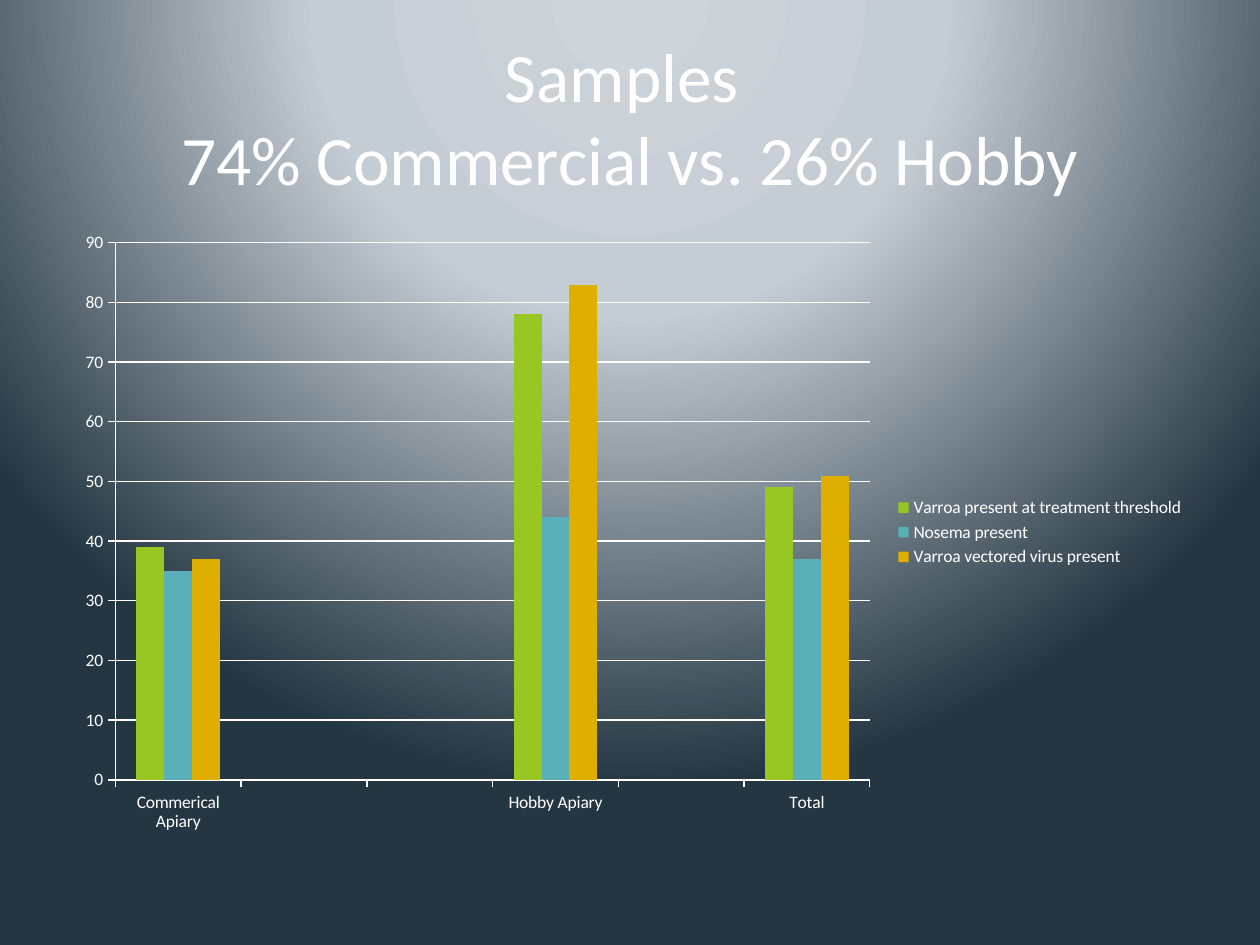
from pptx import Presentation
from pptx.chart.data import CategoryChartData
from pptx.dml.color import RGBColor
from pptx.enum.chart import XL_CHART_TYPE as ChartType, XL_LEGEND_POSITION as LegendPosition
from pptx.enum.chart import XL_TICK_MARK as TickMark
from pptx.enum.text import MSO_ANCHOR, MSO_AUTO_SIZE, PP_ALIGN
from pptx.oxml import parse_xml
from pptx.oxml.ns import nsdecls
from pptx.util import Inches, Pt

FONT = "Calibri"
COLORS = {
    "text": "FFFFFF",
    "glow": "CDD4DA",
    "mist": "C5CDD4",
    "night": "243642",
    "varroa": "98C723",
    "nosema": "59B0B9",
    "virus": "DEAE00",
}
CATEGORIES = ["Commerical Apiary", "", "", "Hobby Apiary", "", "Total"]
SERIES = [
    ("Varroa present at treatment threshold", "varroa", [39, None, None, 78, None, 49]),
    ("Nosema present ", "nosema", [35, None, None, 44, None, 37]),
    ("Varroa vectored virus present", "virus", [37, None, None, 83, None, 51]),
]


def rgb(name):
    return RGBColor.from_string(COLORS[name])


def style_font(font, size):
    font.name = FONT
    font.size = Pt(size)
    font.color.rgb = rgb("text")


def paint_background(page):
    """Fill the page with a circular gradient centred above its top edge."""
    page.background.fill.solid()
    stops = "".join(
        f'<a:gs pos="{percent * 1000}"><a:srgbClr val="{COLORS[name]}"/></a:gs>'
        for percent, name in [(0, "glow"), (40, "mist"), (100, "night")]
    )
    gradient = parse_xml(
        f'<a:gradFill {nsdecls("a")} rotWithShape="1"><a:gsLst>{stops}</a:gsLst>'
        '<a:path path="circle">'
        '<a:fillToRect l="50000" t="-80000" r="50000" b="180000"/>'
        "</a:path></a:gradFill>"
    )
    properties = page.element.xpath(".//p:bgPr")[0]
    properties.replace(properties[0], gradient)


def place_title(page, left, top, width, height):
    title = page.shapes.title
    title.left, title.top, title.width, title.height = left, top, width, height
    frame = title.text_frame
    frame.text = "Samples \v74% Commercial vs. 26% Hobby"
    frame.word_wrap = True
    frame.auto_size = MSO_AUTO_SIZE.NONE
    frame.vertical_anchor = MSO_ANCHOR.MIDDLE
    para = frame.paragraphs[0]
    para.alignment = PP_ALIGN.CENTER
    style_font(para.font, 39.6)


def style_line(line):
    line.color.rgb = rgb("text")
    line.width = Pt(0.75)


def place_chart(page, left, top, width, height):
    data = CategoryChartData()
    data.categories = CATEGORIES
    for name, _, values in SERIES:
        data.add_series(name, values)
    chart = page.shapes.add_chart(
        ChartType.COLUMN_CLUSTERED, left, top, width, height, data
    ).chart
    chart.has_title = False
    style_font(chart.font, 10)

    chart.has_legend = True
    chart.legend.position = LegendPosition.RIGHT
    chart.legend.include_in_layout = False

    for axis in (chart.category_axis, chart.value_axis):
        axis.major_tick_mark = TickMark.OUTSIDE
        axis.minor_tick_mark = TickMark.NONE
        style_line(axis.format.line)
    values_axis = chart.value_axis
    values_axis.minimum_scale, values_axis.maximum_scale = 0, 90
    values_axis.major_unit = 10
    values_axis.has_major_gridlines = True
    style_line(values_axis.major_gridlines.format.line)

    plot = chart.plots[0]
    plot.gap_width = 150
    plot.vary_by_categories = False
    for series, (_, color, _) in zip(plot.series, SERIES):
        series.format.fill.solid()
        series.format.fill.fore_color.rgb = rgb(color)


def main():
    deck = Presentation()
    deck.slide_width, deck.slide_height = Inches(10), Inches(7.5)
    page = deck.slides.add_slide(deck.slide_layouts[5])
    paint_background(page)
    place_title(page, Inches(0.5), Inches(0.3), Inches(9), Inches(1.25))
    place_chart(page, Inches(0.5), Inches(1.75), Inches(9), Inches(4.95))
    deck.save("out.pptx")


if __name__ == "__main__":
    main()
